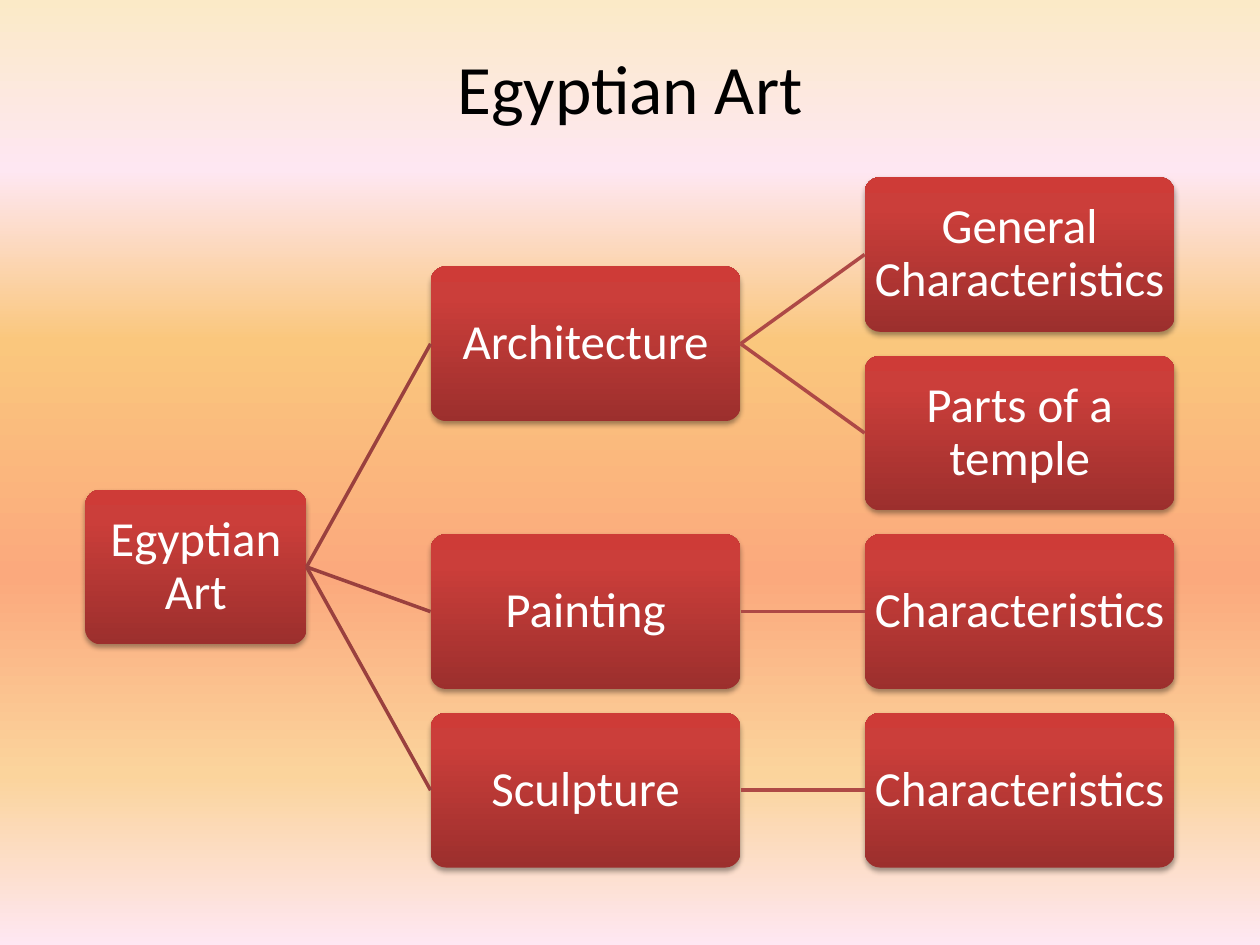
from pptx import Presentation
from pptx.dml.color import RGBColor
from pptx.enum.shapes import MSO_CONNECTOR, MSO_SHAPE
from pptx.enum.text import MSO_ANCHOR, PP_ALIGN
from pptx.oxml import parse_xml
from pptx.oxml.ns import nsdecls, qn
from pptx.util import Cm, Pt

C = {"black": "000000", "white": "FFFFFF", "trunk": "9A403E", "branch": "AE4946"}
SKY = [(0, "FBEAC7"), (18, "FEE7F2"), (36, "FAC77D"),
       (61, "FBA97D"), (82, "FBD49C"), (100, "FEE7F2")]
RED = [(0, "9C2F2D"), (80, "CB3E3A"), (100, "CE3B37")]


def set_gradient(fill, element, stops, angle):
    fill.gradient()
    fill.gradient_angle = angle
    gs_list = next(element.iter(qn("a:gsLst")))
    for gs in list(gs_list):
        gs_list.remove(gs)
    for pos, color in stops:
        gs_list.append(parse_xml(
            f'<a:gs {nsdecls("a")} pos="{pos * 1000}"><a:srgbClr val="{color}"/></a:gs>'))


def write(sp, text, size=28, color="white", spacing=0.9, inset=0.04):
    tf = sp.text_frame
    tf.word_wrap = True
    tf.vertical_anchor = MSO_ANCHOR.MIDDLE
    tf.margin_left = tf.margin_right = tf.margin_top = tf.margin_bottom = Cm(inset)
    p = tf.paragraphs[0]
    p.alignment = PP_ALIGN.CENTER
    p.line_spacing = spacing
    r = p.add_run()
    r.text = text
    r.font.size = Pt(size)
    r.font.name = "Calibri"
    r.font.color.rgb = RGBColor.from_string(C[color])


prs = Presentation()
prs.slide_width, prs.slide_height = Cm(25.4), Cm(19.05)
s = prs.slides.add_slide(prs.slide_layouts[5])

# Background and title
set_gradient(s.background.fill, s.element, SKY, 270)
title = s.shapes.title
title.left, title.top, title.width, title.height = Cm(1.27), Cm(0.76), Cm(22.86), Cm(1.96)
write(title, "Egyptian Art", size=39.6, color="black", spacing=1.0, inset=0.13)

# Tree nodes: text, column, row, index of parent
nodes = [
    ("Egyptian Art", 0, 1.75, None),
    ("Architecture", 1, 0.5, 0),
    ("General Characteristics", 2, 0, 1),
    ("Parts of a temple", 2, 1, 1),
    ("Painting", 1, 2, 0),
    ("Characteristics", 2, 2, 4),
    ("Sculpture", 1, 3, 0),
    ("Characteristics", 2, 3, 6),
]
columns = [(1.72, 4.46), (8.68, 6.25), (17.43, 6.25)]
top, pitch, height = 3.57, 3.6, 3.12

boxes = []
for text, col, row, parent in nodes:
    left, width = columns[col]
    sp = s.shapes.add_shape(MSO_SHAPE.ROUNDED_RECTANGLE, Cm(left),
                            Cm(top + row * pitch), Cm(width), Cm(height))
    sp.adjustments[0] = 0.1
    set_gradient(sp.fill, sp.element, RED, 90)
    sp.line.fill.background()
    sp.shadow.inherit = False
    sp.element.spPr.find(qn("a:effectLst")).append(parse_xml(
        f'<a:outerShdw {nsdecls("a")} blurRad="39400" dist="22900" dir="5400000" '
        'rotWithShape="0"><a:srgbClr val="000000"><a:alpha val="35000"/>'
        '</a:srgbClr></a:outerShdw>'))
    write(sp, text)
    boxes.append(sp)

    # Line from the parent's right side to this box's left side
    if parent is not None:
        line = s.shapes.add_connector(MSO_CONNECTOR.STRAIGHT, 0, 0, 0, 0)
        line.begin_connect(boxes[parent], 3)
        line.end_connect(sp, 1)
        line.line.width = Pt(2)
        line.line.color.rgb = RGBColor.from_string(C["trunk" if col == 1 else "branch"])
        line.element.spPr.append(parse_xml(f'<a:effectLst {nsdecls("a")}/>'))

prs.save("out.pptx")
